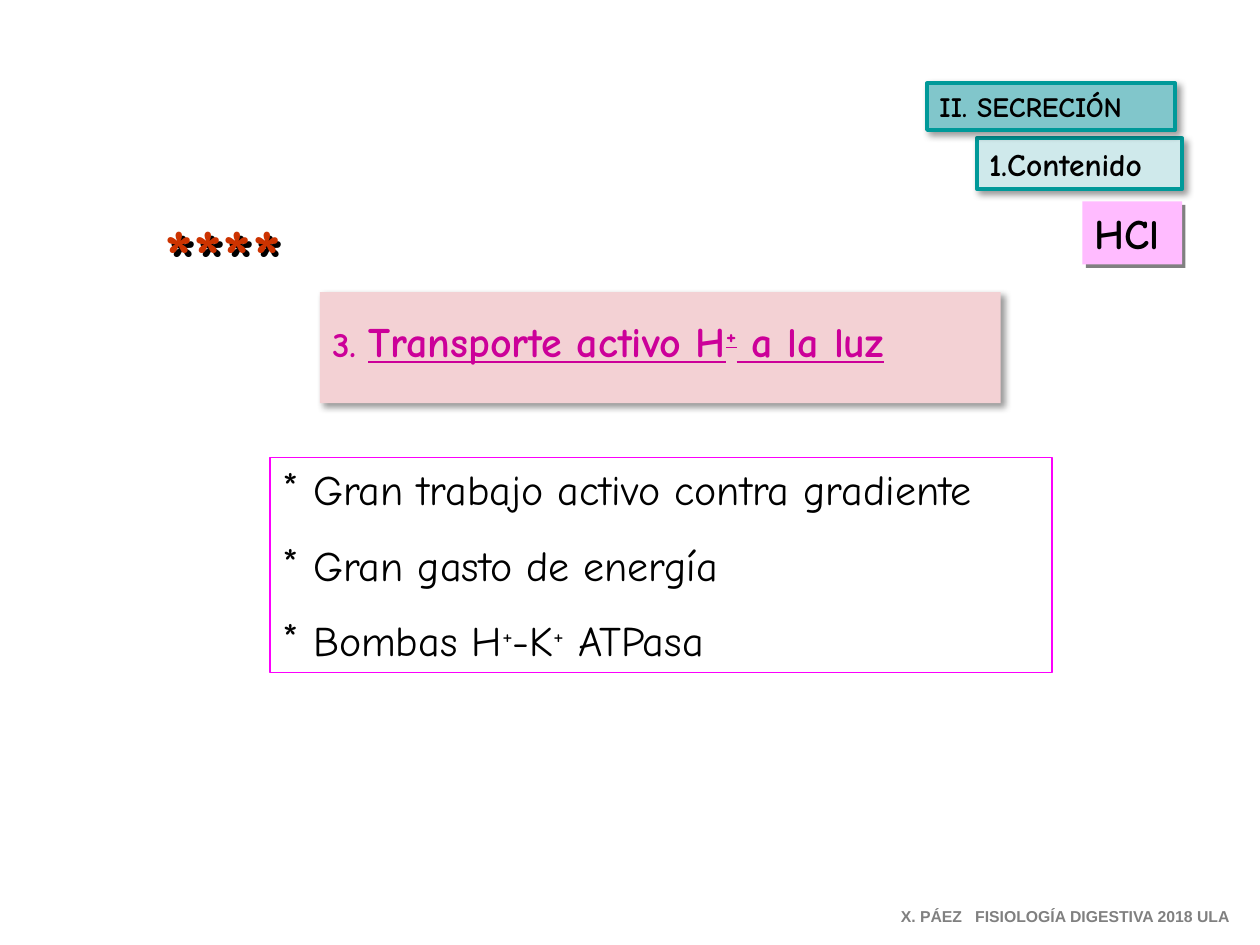
"""Build the slide on active H+ transport in gastric secretion."""
from dataclasses import dataclass, field
from typing import Optional

import pptx
import pptx.dml.color
import pptx.enum.shapes
import pptx.enum.text
import pptx.oxml
import pptx.oxml.ns
import pptx.util

Cm = pptx.util.Cm
Pt = pptx.util.Pt


@dataclass(frozen=True)
class Theme:
    """Colours, fonts and type sizes."""
    hand: str = "Comic Neue"
    plain: str = "Arial"
    ink: str = "000000"
    grey: str = "808080"
    magenta: str = "CC0099"
    orange: str = "CC3300"
    teal: str = "009999"
    frame: str = "FC00FC"
    rose: str = "F3D1D4"
    pink: str = "FFBBFF"
    teal_light: str = "CFE9EB"
    teal_mid: str = "81C6CB"
    footer: float = 9
    section: float = 16
    topic: float = 18
    number: float = 20
    main: float = 24
    stars: float = 44


THEME = Theme()


@dataclass(frozen=True)
class Shadow:
    """Shadow falling to the lower right, in points and percent."""
    color: str
    opacity: int
    blur: float
    distance: float


SOFT = Shadow(THEME.ink, 40, 4, 3)
HARD_GREY = Shadow(THEME.grey, 100, 0, 2.8)
HARD_BLACK = Shadow(THEME.ink, 100, 0, 2.8)


@dataclass(frozen=True)
class Run:
    """Piece of text with its own format."""
    text: str
    format: dict = field(default_factory=dict)
    raised: bool = False


@dataclass(frozen=True)
class Box:
    """Place in centimetres, outline, text and base format of a box."""
    place: tuple[float, float, float, float]
    paragraphs: list[list[Run]]
    size: float
    color: str = THEME.ink
    bold: bool = True
    font: str = THEME.hand
    fill: Optional[str] = None
    line: Optional[str] = None
    weight: float = 2.25
    shadow: Optional[Shadow] = None
    centered: bool = False
    wrap: bool = True
    bullet: Optional[str] = None
    gap: float = 0
    bottom: float = 0.13


UNDERLINED = {"underline": True}

TITLE = Box((6.45, 5.89, 13.72, 2.24), [[
    Run("3. ", {"size": Pt(THEME.number)}),
    Run("Transporte activo H", UNDERLINED),
    Run("+", UNDERLINED, raised=True),
    Run(" a la luz", UNDERLINED),
]], THEME.main, THEME.magenta, fill=THEME.rose, shadow=SOFT, bottom=0.43)

LIST = Box((5.44, 9.22, 15.77, 4.34), [
    [Run("Gran trabajo activo contra gradiente")],
    [Run("Gran gasto de energía")],
    [Run("Bombas H"), Run("+", raised=True), Run("-K"),
     Run("+", raised=True), Run(" ATPasa")],
], THEME.main, bold=False, line=THEME.frame, weight=0.75, bullet="*", gap=14.3)

LABELS = [
    Box((2.49, 4.06, 4.01, 2.13), [[Run("****")]], THEME.stars, THEME.orange,
        shadow=HARD_BLACK, centered=True),
    Box((19.69, 2.79, 4.14, 1.02), [[Run("1.Contenido")]], THEME.topic,
        fill=THEME.teal_light, line=THEME.teal, shadow=SOFT, wrap=False),
    Box((18.69, 1.68, 5, 0.94), [[Run("II. SECRECIÓN")]], THEME.section,
        fill=THEME.teal_mid, line=THEME.teal, shadow=SOFT),
    Box((21.82, 4.06, 2.01, 1.27), [[Run("HCl")]], THEME.main,
        fill=THEME.pink, shadow=HARD_GREY),
    Box((17.91, 18.14, 7.26, 0.64),
        [[Run("X. PÁEZ   FISIOLOGÍA DIGESTIVA 2018 ULA")]],
        THEME.footer, THEME.grey, font=THEME.plain, wrap=False),
]


def set_attributes(target: object, values: dict) -> None:
    """Set every attribute named in the dict."""
    for name, value in values.items():
        setattr(target, name, value)


def rgb(color: str) -> pptx.dml.color.RGBColor:
    """Turn a hex string into a colour."""
    return pptx.dml.color.RGBColor.from_string(color)


def append_xml(parent, markup: str) -> None:
    """Append a DrawingML element to the parent."""
    namespace = pptx.oxml.ns.nsdecls("a")
    parent.append(pptx.oxml.parse_xml(markup.replace(" ", f" {namespace} ", 1)))


def add_shadow(shape, shadow: Shadow) -> None:
    """Give the shape an outer shadow at 45 degrees."""
    effects = shape._element.spPr.find(pptx.oxml.ns.qn("a:effectLst"))
    append_xml(effects, (
        f'<a:outerShdw blurRad="{Pt(shadow.blur)}" dist="{Pt(shadow.distance)}" '
        f'dir="2700000" algn="tl" rotWithShape="0"><a:srgbClr val="{shadow.color}">'
        f'<a:alpha val="{shadow.opacity * 1000}"/></a:srgbClr></a:outerShdw>'))


def write_paragraph(paragraph, runs: list[Run], box: Box, last: bool) -> None:
    """Write one paragraph with its runs, spacing and bullet."""
    align = pptx.enum.text.PP_ALIGN
    set_attributes(paragraph, {
        "alignment": align.CENTER if box.centered else align.LEFT,
        "space_before": Pt(0),
        "space_after": Pt(0 if last else box.gap),
    })
    if box.bullet:
        properties = paragraph._p.get_or_add_pPr()
        indent = Cm(0.62)
        properties.set("marL", str(indent))
        properties.set("indent", str(-indent))
        append_xml(properties, f'<a:buFont typeface="{box.font}"/>')
        append_xml(properties, f'<a:buChar char="{box.bullet}"/>')
    base = {"name": box.font, "size": Pt(box.size), "bold": box.bold}
    for piece in runs:
        run = paragraph.add_run()
        run.text = piece.text
        set_attributes(run.font, base | piece.format)
        run.font.color.rgb = rgb(box.color)
        if piece.raised:
            run._r.get_or_add_rPr().set("baseline", "30000")


def draw_box(shape, box: Box) -> None:
    """Place, paint and fill the shape with the text of the box."""
    names = ("left", "top", "width", "height")
    set_attributes(shape, dict(zip(names, map(Cm, box.place))))
    if box.fill:
        shape.fill.solid()
        shape.fill.fore_color.rgb = rgb(box.fill)
    else:
        shape.fill.background()
    if box.line:
        shape.line.color.rgb = rgb(box.line)
        shape.line.width = Pt(box.weight)
    else:
        shape.line.fill.background()
    shape.shadow.inherit = False
    if box.shadow:
        add_shadow(shape, box.shadow)
    anchor = pptx.enum.text.MSO_ANCHOR
    frame = shape.text_frame
    set_attributes(frame, {
        "word_wrap": box.wrap,
        "auto_size": pptx.enum.text.MSO_AUTO_SIZE.NONE,
        "vertical_anchor": anchor.MIDDLE if box is TITLE else anchor.TOP,
        "margin_left": Cm(0.25), "margin_right": Cm(0.25),
        "margin_top": Cm(0.13), "margin_bottom": Cm(box.bottom),
    })
    for index, runs in enumerate(box.paragraphs):
        paragraph = frame.add_paragraph() if index else frame.paragraphs[0]
        write_paragraph(paragraph, runs, box, runs is box.paragraphs[-1])


def add_label(slide, box: Box) -> None:
    """Add a rectangle, or a text box where nothing is painted."""
    place = tuple(map(Cm, box.place))
    if box.fill:
        rectangle = pptx.enum.shapes.MSO_SHAPE.RECTANGLE
        draw_box(slide.shapes.add_shape(rectangle, *place), box)
    else:
        draw_box(slide.shapes.add_textbox(*place), box)


def main() -> None:
    """Build and save the presentation."""
    presentation = pptx.Presentation()
    set_attributes(presentation, {"slide_width": Cm(25.4), "slide_height": Cm(19.05)})
    slide = presentation.slides.add_slide(presentation.slide_layouts[1])
    draw_box(slide.shapes.title, TITLE)
    draw_box(slide.placeholders[1], LIST)
    for label in LABELS:
        add_label(slide, label)
    presentation.save("out.pptx")


if __name__ == "__main__":
    main()
